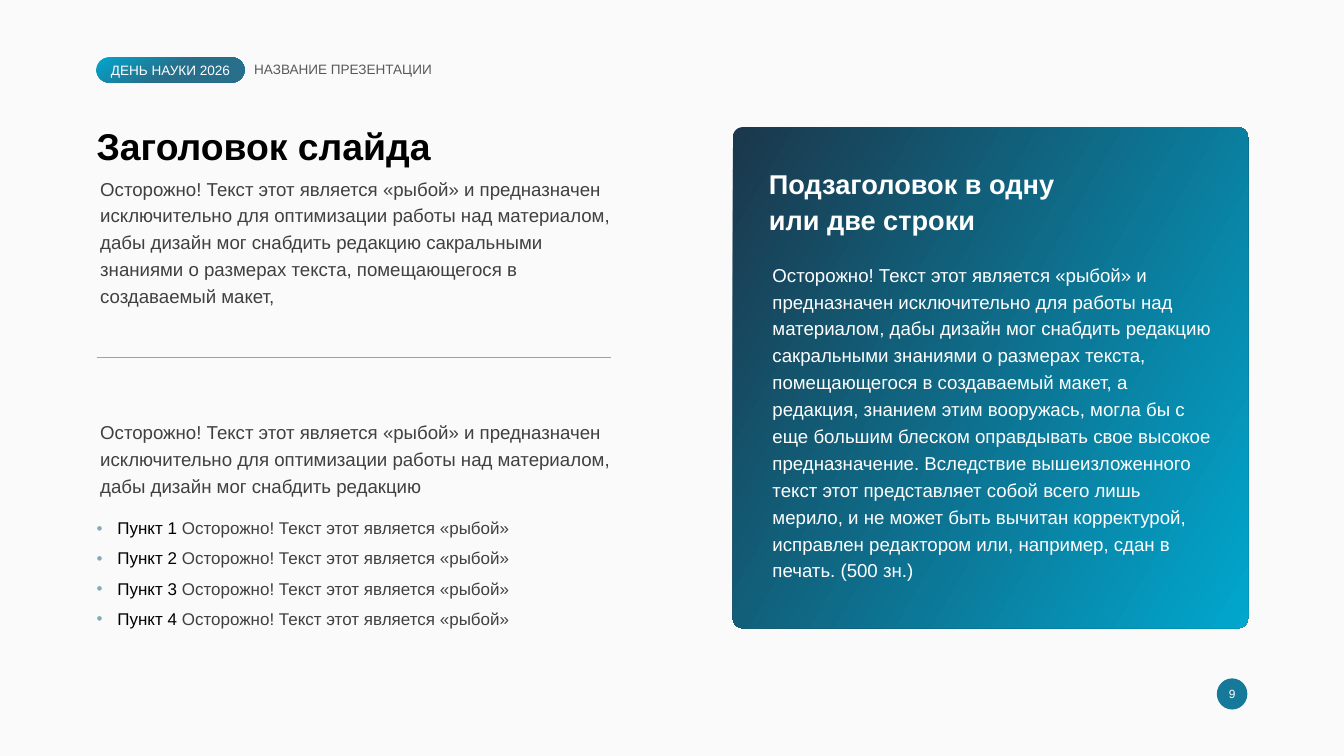
from lxml import etree
from pptx import Presentation
from pptx.dml.color import RGBColor
from pptx.enum.shapes import MSO_CONNECTOR, MSO_SHAPE
from pptx.enum.text import MSO_ANCHOR, MSO_AUTO_SIZE, PP_ALIGN
from pptx.oxml.ns import qn
from pptx.util import Pt

STRAIGHT = MSO_CONNECTOR.STRAIGHT
ROUNDED, OVAL = MSO_SHAPE.ROUNDED_RECTANGLE, MSO_SHAPE.OVAL
TOP, MIDDLE = MSO_ANCHOR.TOP, MSO_ANCHOR.MIDDLE
LEFT, CENTER = PP_ALIGN.LEFT, PP_ALIGN.CENTER
NO_AUTOFIT = MSO_AUTO_SIZE.NONE

PX = 9144
WIDTH, HEIGHT = 2199, 1237
FONT = "Arial"
COLORS = {
    "page": "FAFAFA", "white": "FFFFFF", "black": "000000", "text": "404040",
    "muted": "595959", "badge": "17799A", "cyan": "01A7CE", "teal": "276F8B",
    "navy": "1B374B", "rule": "84ACB6",
}

EVENT = "ДЕНЬ НАУКИ 2026"
PAGE_NUMBER = "9"
HEADING = "Заголовок слайда"
FISH = "Осторожно! Текст этот является «рыбой»"
OPENING = (FISH + " и предназначен исключительно для оптимизации работы над материалом, "
           "дабы дизайн мог снабдить редакцию")
INTRO = OPENING + " сакральными знаниями о размерах текста, помещающегося в создаваемый макет,"
PANEL_TEXT = (
    FISH + " и предназначен исключительно для работы над материалом, "
    "дабы дизайн мог снабдить редакцию сакральными знаниями о размерах текста, "
    "помещающегося в создаваемый макет, а редакция, знанием этим вооружась, "
    "могла бы с еще большим блеском оправдывать свое высокое предназначение. "
    "Вследствие вышеизложенного текст этот представляет собой всего лишь мерило, "
    "и не может быть вычитан корректурой, исправлен редактором или, например, "
    "сдан в печать. (500 зн.)"
)
POINTS = [f"Пункт {number} " for number in range(1, 5)]

MARGIN = 158
PANEL_LEFT = 1258
INSET = (6, 6, 6, 6)
TEXTS = [
    ("НАЗВАНИЕ ПРЕЗЕНТАЦИИ", (416, 103, 358, 24), (0, 0, 0, 0), 16, "muted", False, 0.9),
    ("Подзаголовок в одну или две строки", (PANEL_LEFT, 242, 540, 172), (0, 27, 27, 27),
     32, "white", True, 1.1),
    (PANEL_TEXT, (PANEL_LEFT, 418, 733, 540), INSET, 22, "white", False, 1.2),
    (INTRO, (MARGIN, 277, 867, 229), INSET, 22, "text", False, 1.2),
    (OPENING, (MARGIN, 675, 867, 140), INSET, 22, "text", False, 1.2),
]


def rgb(color):
    return RGBColor.from_string(COLORS[color])


def scaled(box):
    return [value * PX for value in box]


def place(shape, box):
    shape.left, shape.top, shape.width, shape.height = scaled(box)


def set_frame(shape, inset, anchor=TOP):
    frame = shape.text_frame
    frame.auto_size = NO_AUTOFIT
    frame.word_wrap = True
    frame.vertical_anchor = anchor
    (frame.margin_left, frame.margin_top,
     frame.margin_right, frame.margin_bottom) = scaled(inset)
    return frame


def add_run(paragraph, text, size, color, bold=False):
    run = paragraph.add_run()
    run.text = text
    run.font.name = FONT
    run.font.size = Pt(size)
    run.font.bold = bold
    run.font.color.rgb = rgb(color)


def write(shape, text, inset, size, color, bold=False, spacing=1.0, align=LEFT, anchor=TOP):
    paragraph = set_frame(shape, inset, anchor).paragraphs[0]
    paragraph.alignment = align
    paragraph.line_spacing = spacing
    add_run(paragraph, text, size, color, bold)


def add_block(slide, kind, box):
    block = slide.shapes.add_shape(kind, *scaled(box))
    block.shadow.inherit = False
    block.line.fill.background()
    return block


def fill_gradient(shape, clockwise, stops):
    shape.fill.gradient()
    shape.fill.gradient_angle = 360 - clockwise
    for stop, (position, color) in zip(shape.fill.gradient_stops, stops):
        stop.position = position
        stop.color.rgb = rgb(color)


def add_bullet(paragraph):
    properties = paragraph._p.get_or_add_pPr()
    properties.set("marL", str(34 * PX))
    properties.set("indent", str(-34 * PX))
    bullet_color = etree.SubElement(properties, qn("a:buClr"))
    etree.SubElement(bullet_color, qn("a:srgbClr"), val=COLORS["rule"])
    etree.SubElement(properties, qn("a:buFont"), typeface=FONT)
    etree.SubElement(properties, qn("a:buChar"), char="•")


def main():
    deck = Presentation()
    deck.slide_width, deck.slide_height = WIDTH * PX, HEIGHT * PX
    slide = deck.slides.add_slide(deck.slide_layouts[1])
    slide.background.fill.solid()
    slide.background.fill.fore_color.rgb = rgb("page")

    heading = slide.shapes.title
    place(heading, (MARGIN, 209, 1492, 67))
    write(heading, HEADING, (0, 0, 0, 0), 44, "black", True, 0.9)

    points = slide.placeholders[1]
    place(points, (MARGIN, 841, 908, 200))
    frame = set_frame(points, (0, 10, 0, 10))
    for index, label in enumerate(POINTS):
        paragraph = frame.add_paragraph() if index else frame.paragraphs[0]
        add_bullet(paragraph)
        paragraph.line_spacing = 0.9
        paragraph.space_before = Pt(14 if index else 0)
        add_run(paragraph, label, 20, "black")
        add_run(paragraph, FISH, 20, "text")

    event = add_block(slide, ROUNDED, (MARGIN, 94, 242, 41))
    event.adjustments[0] = 0.5
    fill_gradient(event, 60, [(0, "cyan"), (0.51, "teal")])
    write(event, EVENT, (0, 0, 0, 0), 16, "white", align=CENTER, anchor=MIDDLE)

    page_badge = add_block(slide, OVAL, (1991, 1110, 50, 51))
    page_badge.fill.solid()
    page_badge.fill.fore_color.rgb = rgb("badge")
    write(page_badge, PAGE_NUMBER, (0, 0, 0, 0), 14, "white", align=CENTER, anchor=MIDDLE)

    panel = add_block(slide, ROUNDED, (1199, 208, 843, 820))
    panel.adjustments[0] = 0.02
    fill_gradient(panel, 30, [(0, "navy"), (1, "cyan")])

    for text, box, inset, size, color, bold, spacing in TEXTS:
        write(slide.shapes.add_textbox(*scaled(box)), text, inset, size, color, bold, spacing)

    divider = slide.shapes.add_connector(STRAIGHT, *scaled((MARGIN, 585, 999, 585)))
    divider.line.color.rgb = rgb("rule")
    divider.line.width = Pt(2)
    etree.SubElement(divider._element.spPr, qn("a:effectLst"))

    deck.save("out.pptx")


if __name__ == "__main__":
    main()
